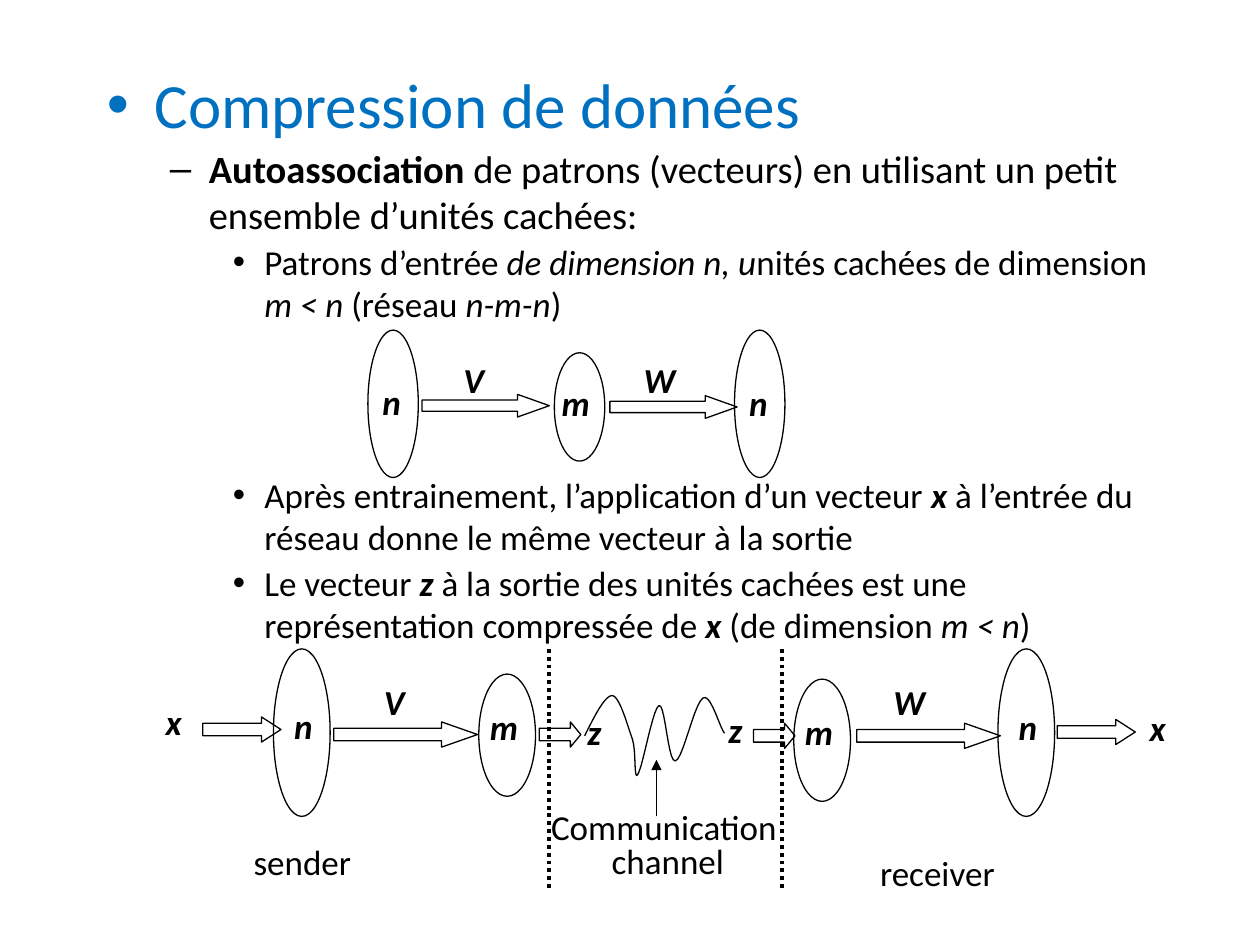
from dataclasses import dataclass

from lxml import etree
from pptx import Presentation
from pptx.dml.color import RGBColor
from pptx.enum.dml import MSO_LINE
from pptx.enum.shapes import MSO_CONNECTOR, MSO_SHAPE
from pptx.enum.text import PP_ALIGN
from pptx.oxml.ns import qn
from pptx.util import Inches, Pt

BLACK = RGBColor(0x00, 0x00, 0x00)
BLUE = RGBColor(0x00, 0x70, 0xC0)
FONT = "Calibri"
LABEL_SIZE = 20
LABEL_ROWS = 4.3
LABEL_SHIFT = 0.4  # a label box starts this many columns left of its layer
CURVE_STEPS = 10

# Bullet character, left margin and hanging indent (inches), text size, colour
LEVELS = [
    ("•", 0.38, 0.38, 36, BLUE),
    ("–", 0.81, 0.31, 22, BLACK),
    ("•", 1.25, 0.25, 20, BLACK),
]

# Level, space before in points, runs of (text, style); b is bold, i is italic
OUTLINE = [
    (0, 0, [("Compression de données", "")]),
    (1, 2.2, [("Autoassociation", "b"),
              (" de patrons (vecteurs) en utilisant un petit ensemble d’unités cachées:", "")]),
    (2, 2, [("Patrons d’entrée ", ""), ("de dimension n, u", "i"),
            ("nités cachées de dimension ", ""), ("m < n", "i"),
            (" (réseau ", ""), ("n-m-n", "i"), (")", "")]),
    # The wide space leaves room for the small network
    (2, 85, [("Après entrainement, l’application d’un vecteur ", ""), ("x", "bi"),
             (" à l’entrée du réseau donne le même vecteur à la sortie", "")]),
    (2, 2, [("Le vecteur ", ""), ("z ", "bi"),
            ("à la sortie des unités cachées est une représentation compressée de ", ""),
            ("x ", "bi"), ("(de dimension ", ""), ("m < n", "i"), (")", "")]),
]


@dataclass
class Grid:
    """A region of the slide, in inches, with square cells."""
    left: float
    top: float
    cell: float = 0.1

    def point(self, column, row):
        return Inches(self.left + column * self.cell), Inches(self.top + row * self.cell)

    def place(self, column, row, columns, rows):
        return (*self.point(column, row),
                Inches(columns * self.cell), Inches(rows * self.cell))


def add_run(paragraph, text, size, color=BLACK, style=""):
    run = paragraph.add_run()
    run.text = text
    run.font.name = FONT
    run.font.size = Pt(size)
    run.font.color.rgb = color
    run.font.bold = "b" in style
    run.font.italic = "i" in style


def add_text(slide, place, lines, align, style="", spacing=None):
    frame = slide.shapes.add_textbox(*place).text_frame
    frame.word_wrap = True
    for index, line in enumerate(lines):
        paragraph = frame.add_paragraph() if index else frame.paragraphs[0]
        paragraph.alignment = align
        paragraph.line_spacing = spacing
        add_run(paragraph, line, LABEL_SIZE, BLACK, style)


def add_label(slide, grid, text, column, row, columns):
    add_text(slide, grid.place(column, row, columns, LABEL_ROWS), [text],
             PP_ALIGN.RIGHT, "bi")


def outline_shape(shape):
    shape.shadow.inherit = False
    shape.fill.background()
    shape.line.color.rgb = BLACK
    shape.line.width = Pt(0.75)


def add_layer(slide, grid, text, column, row, columns, rows, label_row):
    ellipse = slide.shapes.add_shape(MSO_SHAPE.OVAL, *grid.place(column, row, columns, rows))
    outline_shape(ellipse)
    add_label(slide, grid, text, column - LABEL_SHIFT, label_row, columns)


def add_block_arrow(slide, grid, column, row, columns, rows):
    arrow = slide.shapes.add_shape(MSO_SHAPE.RIGHT_ARROW,
                                   *grid.place(column, row, columns, rows))
    outline_shape(arrow)
    arrow.adjustments[0] = 0.5
    arrow.adjustments[1] = columns / 4 / rows  # the head takes a quarter of the length


def add_line(slide, grid, start, end, width):
    line = slide.shapes.add_connector(MSO_CONNECTOR.STRAIGHT,
                                      *grid.point(*start), *grid.point(*end))
    line.line.color.rgb = BLACK
    line.line.width = Pt(width)
    etree.SubElement(line._element.spPr, qn("a:effectLst"))
    return line


def add_wave(slide, grid, start, curves):
    """Draw a smooth open line through cubic curves."""
    points = []
    origin = start
    for first, second, end in curves:
        for step in range(1, CURVE_STEPS + 1):
            t = step / CURVE_STEPS
            u = 1 - t
            points.append(grid.point(*(
                u**3 * a + 3 * u * u * t * b + 3 * u * t * t * c + t**3 * d
                for a, b, c, d in zip(origin, first, second, end))))
        origin = end
    builder = slide.shapes.build_freeform(*grid.point(*start))
    builder.add_line_segments(points, close=False)
    outline_shape(builder.convert_to_shape())


def add_outline(slide, left, top, width, height):
    frame = slide.shapes.add_textbox(
        Inches(left), Inches(top), Inches(width), Inches(height)).text_frame
    frame.word_wrap = True
    for index, (level, space, runs) in enumerate(OUTLINE):
        bullet, margin, hanging, size, color = LEVELS[level]
        paragraph = frame.add_paragraph() if index else frame.paragraphs[0]
        paragraph.level = level
        paragraph.space_before = Pt(space)
        properties = paragraph._p.get_or_add_pPr()
        properties.set("marL", str(Inches(margin)))
        properties.set("indent", str(-Inches(hanging)))
        etree.SubElement(properties, qn("a:buFont"), typeface="Arial")
        etree.SubElement(properties, qn("a:buChar"), char=bullet)
        for text, style in runs:
            add_run(paragraph, text, size, color, style)


def add_network(slide, grid):
    # Layers
    for text, column, row, rows, label_row in [
            ("n", 0.2, 0.2, 11.7, 3.7), ("m", 15, 2, 8.6, 3.8), ("n", 29.3, 0.2, 11.7, 3.8)]:
        add_layer(slide, grid, text, column, row, 4, rows, label_row)
    # Weights
    for text, column, arrow_column, arrow_row in [("V", 6.4, 4.5, 5.3), ("W", 21.1, 19.4, 5.4)]:
        add_block_arrow(slide, grid, arrow_column, arrow_row, 10.1, 1.8)
        add_label(slide, grid, text, column, 2, 4)


def add_transmission(slide, grid):
    # Layers of the sender and the receiver
    for text, column, row, rows, label_row in [
            ("n", 10.7, 0, 13.3, 3.9), ("m", 27, 2, 9.7, 4),
            ("m", 52, 2.4, 9.7, 4.4), ("n", 68.2, 0, 13.3, 4)]:
        add_layer(slide, grid, text, column, row, 4.5, rows, label_row)
    # Flow from input to output
    for column, row, columns in [(5.1, 5.4, 6.2), (15.5, 5.8, 11.4), (31.8, 5.8, 3.3),
                                 (48.8, 5.9, 3.3), (57, 5.9, 11.4), (72.9, 5.6, 6.2)]:
        add_block_arrow(slide, grid, column, row, columns, 2)
    for text, column, row in [("x", -0.1, 3.6), ("V", 17.6, 2), ("z", 33.2, 4.4),
                              ("z", 44.4, 4.2), ("W", 58.9, 2), ("x", 78, 4.1)]:
        add_label(slide, grid, text, column, row, 4.5)
    # Channel signal and its pointer
    add_wave(slide, grid, (35.4, 6.9), [
        ((36.2, 5.3), (37, 3.7), (37.6, 3.7)),
        ((38.2, 3.8), (38.8, 6.1), (39.2, 7.2)),
        ((39.5, 8.2), (39.3, 10.4), (39.6, 10)),
        ((40, 9.5), (40.8, 4.7), (41.3, 4.5)),
        ((41.8, 4.3), (42, 9), (42.6, 8.9)),
        ((43.2, 8.8), (44.1, 4.3), (44.8, 3.9)),
        ((45.4, 3.5), (46.1, 6.2), (46.5, 6.7))])
    pointer = add_line(slide, grid, (41.1, 13.3), (41.1, 8.8), 0.75)
    etree.SubElement(pointer.line._get_or_add_ln(), qn("a:tailEnd"), type="triangle")
    # Borders of the channel
    for column in (32.6, 51.1):
        border = add_line(slide, grid, (column, 0), (column, 19), 2.25)
        border.line.dash_style = MSO_LINE.ROUND_DOT
    # Captions
    add_text(slide, grid.place(28.4, 12.6, 27.2, 6.4), ["Communication ", "channel"],
             PP_ALIGN.CENTER, spacing=0.8)
    for text, column, row in [("sender", 2, 14.7), ("receiver", 52.4, 15.6)]:
        add_text(slide, grid.place(column, row, 22, LABEL_ROWS), [text], PP_ALIGN.CENTER)


def main():
    presentation = Presentation()
    presentation.slide_width = Inches(10)
    presentation.slide_height = Inches(7.5)
    slide = presentation.slides.add_slide(presentation.slide_layouts[6])
    add_outline(slide, 0.75, 0.47, 8.5, 6.67)
    add_network(slide, Grid(2.9, 2.6))
    add_transmission(slide, Grid(1.1, 5.15))
    presentation.save("out.pptx")


if __name__ == "__main__":
    main()
